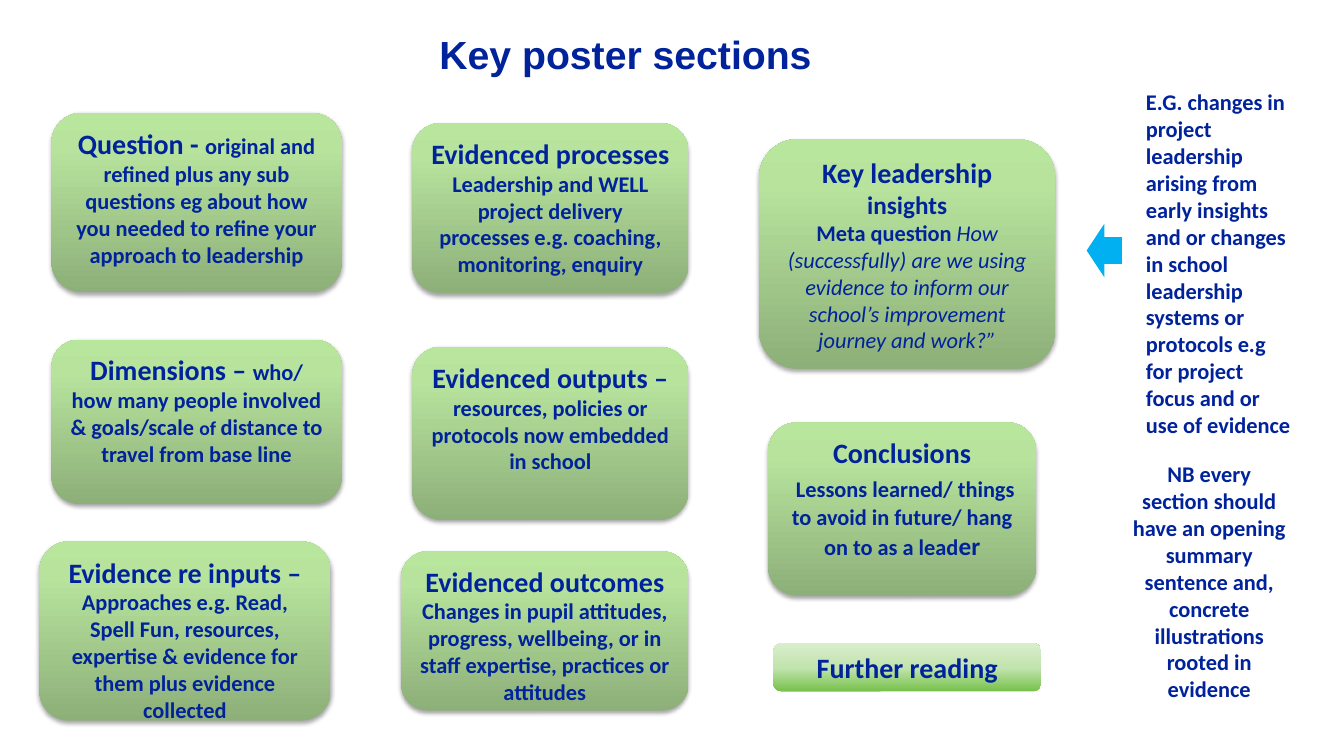
from dataclasses import dataclass

import pptx
import pptx.dml.color
import pptx.enum.shapes
import pptx.enum.text
import pptx.oxml
import pptx.oxml.ns
import pptx.util

SHAPE = pptx.enum.shapes.MSO_SHAPE
ALIGN = pptx.enum.text.PP_ALIGN
ANCHOR = pptx.enum.text.MSO_ANCHOR
qn = pptx.oxml.ns.qn


@dataclass(frozen=True)
class Theme:
    ink: str = "00239B"
    paper: str = "FFFFFF"
    arrow: str = "00B0F0"
    card: tuple = ((0, "8DAF79"), (80, "B7E39D"), (100, "B8E69C"))
    banner: tuple = ((0, "76C149"), (48, "C1E3AD"), (100, "D9EECC"))
    title_font: str = "Arial"
    font: str = "Calibri"
    title: int = 28
    head: int = 20
    mid: int = 18
    body: int = 16
    small: int = 14


T = Theme()


def rgb(value):
    return pptx.dml.color.RGBColor.from_string(value)


def drawing_xml(markup):
    """Turn a DrawingML fragment with one root element into an element."""
    return pptx.oxml.parse_xml(
        markup.replace(" ", f' {pptx.oxml.ns.nsdecls("a")} ', 1))


class Poster:
    """Draws on one slide; every box is (left, top, width, height) in percent of the slide."""

    def __init__(self, prs, theme):
        self.prs, self.theme = prs, theme
        self.s = prs.slides.add_slide(prs.slide_layouts[5])

    def place(self, box):
        w, h = self.prs.slide_width, self.prs.slide_height
        return [round(share * full / 100) for share, full in zip(box, (w, h, w, h))]

    def set_text(self, tf, paragraphs, align=ALIGN.CENTER, anchor=ANCHOR.TOP, font=None):
        """Fill a frame; a run is (text, size) or (text, size, "italic"), None a line break."""
        tf.word_wrap = True
        tf.auto_size = pptx.enum.text.MSO_AUTO_SIZE.NONE
        tf.vertical_anchor = anchor
        for i, runs in enumerate(paragraphs):
            p = tf.add_paragraph() if i else tf.paragraphs[0]
            p.alignment = align
            for run in runs:
                if run is None:
                    p.add_line_break()
                    continue
                text, size, *style = run
                r = p.add_run()
                r.text = text
                r.font.name = font or self.theme.font
                r.font.size = pptx.util.Pt(size)
                r.font.bold = not style
                r.font.italic = bool(style)
                r.font.color.rgb = rgb(self.theme.ink)

    def title(self, box, text):
        sp = self.s.shapes.title
        sp.left, sp.top, sp.width, sp.height = self.place(box)
        sp.text_frame.margin_top = pptx.util.Inches(0.08)
        self.set_text(sp.text_frame, [[(text, self.theme.title)]], font=self.theme.title_font)

    def shape(self, kind, box, fill):
        """Add a borderless shape; fill is a colour or gradient stops from bottom to top."""
        sp = self.s.shapes.add_shape(kind, *self.place(box))
        sp.shadow.inherit = False
        sp.line.fill.background()
        if isinstance(fill, str):
            sp.fill.solid()
            sp.fill.fore_color.rgb = rgb(fill)
        else:
            sp.fill.gradient()
            sp.fill.gradient_angle = 90
            stops = sp.element.spPr.find(qn("a:gradFill")).find(qn("a:gsLst"))
            for stop in list(stops):
                stops.remove(stop)
            for pos, colour in fill:
                stops.append(drawing_xml(
                    f'<a:gs pos="{pos * 1000}"><a:srgbClr val="{colour}"/></a:gs>'))
        return sp

    def card(self, box, paragraphs):
        sp = self.shape(SHAPE.ROUNDED_RECTANGLE, box, self.theme.card)
        sp.element.spPr.find(qn("a:effectLst")).append(drawing_xml(
            f'<a:outerShdw blurRad="{pptx.util.Pt(3.1)}" dist="{pptx.util.Pt(1.8)}"'
            ' dir="5400000" rotWithShape="0"><a:srgbClr val="000000">'
            '<a:alpha val="35000"/></a:srgbClr></a:outerShdw>'))
        self.set_text(sp.text_frame, paragraphs)

    def banner(self, box, text):
        sp = self.shape(SHAPE.ROUNDED_RECTANGLE, box, self.theme.banner)
        self.set_text(sp.text_frame, [[(text, self.theme.head)]], anchor=ANCHOR.MIDDLE)

    def panel(self, box, text):
        sp = self.shape(SHAPE.ROUNDED_RECTANGLE, box, self.theme.paper)
        self.set_text(sp.text_frame, [[(text, self.theme.body)]], ALIGN.LEFT)

    def note(self, box, text):
        sp = self.s.shapes.add_textbox(*self.place(box))
        self.set_text(sp.text_frame, [[(text, self.theme.body)]])

    def arrow(self, box):
        self.shape(SHAPE.RIGHT_ARROW, box, self.theme.arrow).rotation = 180


CARDS = [
    ((3.83, 14.93, 21.6, 23.73),
     [[("Question - ", T.head),
       ("original and refined plus any sub questions eg about how you needed "
        "to refine your approach to leadership", T.body)]]),
    ((3.83, 44.93, 21.6, 21.73),
     [[("Dimensions – ", T.head),
       ("who/ how many people involved & goals/scale ", T.body),
       ("of ", T.small), ("distance to travel from base line", T.body)]]),
    ((2.93, 71.6, 21.68, 23.73),
     [[("Evidence re inputs – ", T.head),
       ("Approaches e.g. Read, Spell Fun, resources, expertise & evidence for "
        "them plus evidence collected", T.body)]]),
    ((30.68, 16.27, 20.55, 22.53),
     [[("Evidenced processes", T.head)],
      [("Leadership and WELL project delivery processes e.g. coaching, "
        "monitoring, enquiry", T.body)]]),
    ((30.68, 45.87, 20.55, 22.93),
     [[("Evidenced outputs – ", T.head),
       ("resources, policies or protocols now embedded in school", T.body)]]),
    ((29.85, 72.93, 21.38, 21.07),
     [[("Evidenced outcomes ", T.head),
       ("Changes in pupil attitudes, progress, wellbeing, or in staff "
        "expertise, practices or attitudes", T.body)]]),
    ((56.48, 18.4, 22.05, 30.4),
     [[("Key leadership", T.head), None, ("insights", T.mid)],
      [("Meta question ", T.body),
       ("How (successfully) are we using evidence to inform our school’s "
        "improvement journey and work?”", T.body, "italic")]]),
    ((57.15, 55.87, 19.95, 22.93),
     [[("Conclusions", T.head)],
      [(" ", T.head),
       ("Lessons learned/ things to avoid in future/ hang on to as a lead", T.body),
       ("er", T.mid)]]),
]


def main():
    prs = pptx.Presentation()
    prs.slide_width = pptx.util.Inches(13.33)
    prs.slide_height = pptx.util.Inches(7.5)
    poster = Poster(prs, T)
    poster.title((16.65, 2.93, 59.78, 9.2), "Key poster sections")
    for box, paragraphs in CARDS:
        poster.card(box, paragraphs)
    poster.banner((57.53, 85.07, 19.95, 6.4), "Further reading")
    poster.panel((83.85, 9.87, 13.88, 44.67),
                 "E.G. changes in project leadership arising from early insights and or "
                 "changes in school leadership systems or protocols e.g for project "
                 "focus and or use of evidence")
    poster.note((83.48, 60.27, 12.98, 34.53),
                "NB every section should have an opening summary sentence and, "
                "concrete illustrations rooted in evidence")
    poster.arrow((80.85, 29.6, 2.63, 7.07))
    prs.save("out.pptx")


if __name__ == "__main__":
    main()
